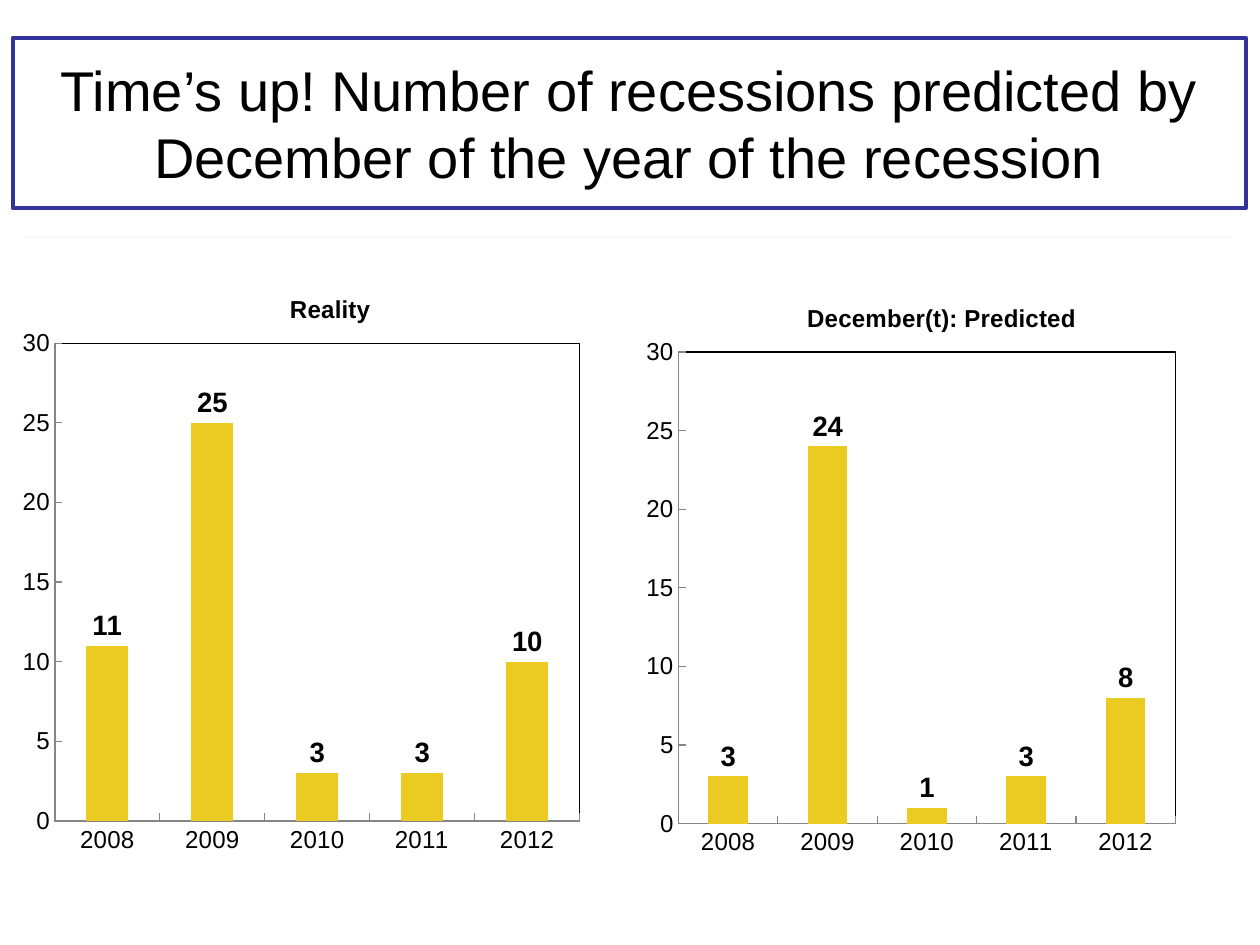
import pptx
import pptx.util
import pptx.chart.data
import pptx.dml.color
import pptx.enum.chart
import pptx.enum.shapes
import pptx.enum.text
import pptx.oxml
import pptx.oxml.ns
from pptx.util import Inches

FONT = "Arial"
TITLE = "Time’s up! Number of recessions predicted by December of the year of the recession"
YEARS = ["2008", "2009", "2010", "2011", "2012"]
CHARTS = [
    {"title": "Reality", "values": [11, 25, 3, 3, 10],
     "box": (0.18, 2.1, 4.65, 4.8),
     "plot": (0.04, 0.13, 0.91, 0.79), "title_at": (0.44, 0.04)},
    {"title": "December(t): Predicted", "values": [3, 24, 1, 3, 8],
     "box": (5.13, 2.17, 4.37, 4.8),
     "plot": (0.04, 0.13, 0.92, 0.78), "title_at": (0.27, 0.04)},
]


def color(value):
    return pptx.dml.color.RGBColor.from_string(value)


def style_font(font, size, bold=False):
    font.name = FONT
    font.size = pptx.util.Pt(size)
    font.bold = bold
    font.color.rgb = color("000000")


def style_line(line, value, width):
    line.color.rgb = color(value)
    line.width = pptx.util.Pt(width)


def manual_layout(parent, position, inner=False):
    for old in parent.findall(pptx.oxml.ns.qn("c:layout")):
        parent.remove(old)
    target = '<c:layoutTarget val="inner"/>' if inner else ""
    modes = "".join(f'<c:{axis}Mode val="edge"/>' for axis in "xy")
    places = "".join(f'<c:{name} val="{value}"/>' for name, value in zip("xywh", position))
    layout = pptx.oxml.parse_xml(
        f'<c:layout {pptx.oxml.ns.nsdecls("c")}><c:manualLayout>'
        f'{target}{modes}{places}</c:manualLayout></c:layout>')
    parent.insert(0 if inner else 1, layout)


def outline_plot(plot_area):
    plot_area.append(pptx.oxml.parse_xml(
        f'<c:spPr {pptx.oxml.ns.nsdecls("c", "a")}><a:noFill/><a:ln w="9525">'
        '<a:solidFill><a:srgbClr val="000000"/></a:solidFill></a:ln></c:spPr>'))


def add_column_chart(slide, content):
    data = pptx.chart.data.CategoryChartData()
    data.categories = YEARS
    data.add_series("Series 1", content["values"])
    chart = slide.shapes.add_chart(
        pptx.enum.chart.XL_CHART_TYPE.COLUMN_CLUSTERED,
        *map(Inches, content["box"]), data).chart
    style_font(chart.font, 12)
    chart.has_legend = False

    chart.has_title = True
    chart.chart_title.include_in_layout = True
    run = chart.chart_title.text_frame.paragraphs[0].add_run()
    run.text = content["title"]
    style_font(run.font, 14, True)
    manual_layout(chart.chart_title._element, content["title_at"])

    for axis in (chart.category_axis, chart.value_axis):
        axis.has_major_gridlines = False
        axis.major_tick_mark = pptx.enum.chart.XL_TICK_MARK.INSIDE
        axis.minor_tick_mark = pptx.enum.chart.XL_TICK_MARK.NONE
        style_font(axis.tick_labels.font, 14)
        style_line(axis.format.line, "868686", 0.75)
    chart.value_axis.minimum_scale = 0
    chart.value_axis.maximum_scale = 30
    chart.value_axis.major_unit = 5

    plot = chart.plots[0]
    plot.gap_width = 150
    plot.vary_by_categories = False
    fill = plot.series[0].format.fill
    fill.solid()
    fill.fore_color.rgb = color("EBCA21")
    plot.has_data_labels = True
    plot.data_labels.show_value = True
    plot.data_labels.position = pptx.enum.chart.XL_LABEL_POSITION.OUTSIDE_END
    style_font(plot.data_labels.font, 16, True)

    plot_area = chart._chartSpace.chart.plotArea
    manual_layout(plot_area, content["plot"], inner=True)
    outline_plot(plot_area)


def main():
    presentation = pptx.Presentation()
    presentation.slide_width = Inches(10)
    presentation.slide_height = Inches(7.5)
    slide = presentation.slides.add_slide(presentation.slide_layouts[5])

    title = slide.shapes.title
    title.left, title.top, title.width, title.height = map(Inches, (0.1, 0.3, 9.79, 1.35))
    style_line(title.line, "333399", 2.25)
    title.text_frame.word_wrap = True
    title.text_frame.vertical_anchor = pptx.enum.text.MSO_ANCHOR.MIDDLE
    paragraph = title.text_frame.paragraphs[0]
    paragraph.alignment = pptx.enum.text.PP_ALIGN.CENTER
    run = paragraph.add_run()
    run.text = TITLE
    style_font(run.font, 32)

    divider = slide.shapes.add_connector(
        pptx.enum.shapes.MSO_CONNECTOR.STRAIGHT,
        *map(Inches, (0.18, 1.88, 9.78, 1.88)))
    style_line(divider.line, "F9F9F9", 1.5)
    divider._element.spPr.append(
        pptx.oxml.parse_xml(f'<a:effectLst {pptx.oxml.ns.nsdecls("a")}/>'))

    for content in CHARTS:
        add_column_chart(slide, content)

    presentation.save("out.pptx")


if __name__ == "__main__":
    main()
